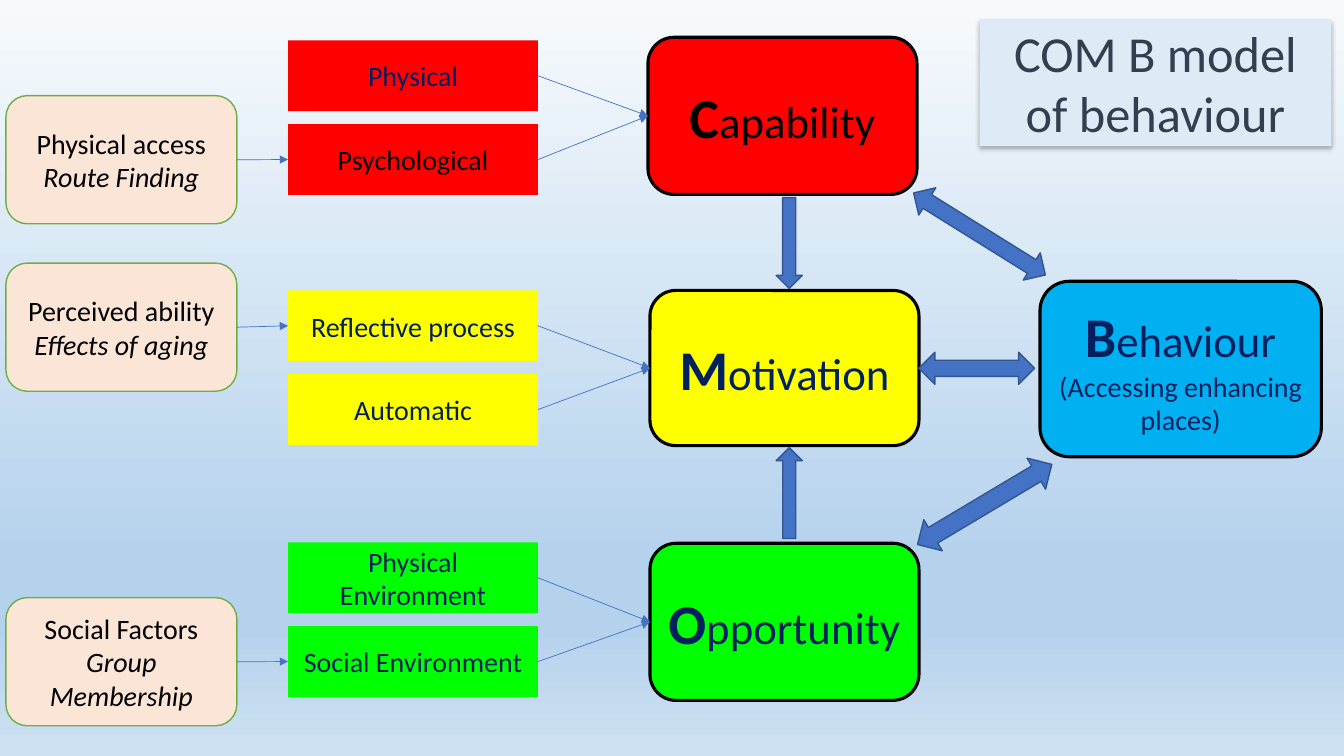
from dataclasses import dataclass

from lxml import etree
from pptx import Presentation
from pptx.dml.color import RGBColor
from pptx.enum.shapes import MSO_CONNECTOR, MSO_SHAPE
from pptx.enum.text import MSO_ANCHOR, MSO_AUTO_SIZE, PP_ALIGN
from pptx.oxml.ns import qn
from pptx.util import Cm, Pt

RECT = MSO_SHAPE.RECTANGLE
ROUND = MSO_SHAPE.ROUNDED_RECTANGLE
DOWN = MSO_SHAPE.DOWN_ARROW
BOTH = MSO_SHAPE.UP_DOWN_ARROW
LINE = MSO_CONNECTOR.STRAIGHT
MIDDLE = MSO_ANCHOR.MIDDLE
CENTER = PP_ALIGN.CENTER
NO_FIT = MSO_AUTO_SIZE.NONE
LEFT, RIGHT = 1, 3


@dataclass(frozen=True)
class Theme:
    font: str = "Calibri"
    black: str = "000000"
    navy: str = "002060"
    slate: str = "333F50"
    red: str = "FF0000"
    yellow: str = "FFFF00"
    green: str = "00FF00"
    cyan: str = "00B0F0"
    blue: str = "4472C4"
    edge: str = "325491"
    peach: str = "FBE5D6"
    leaf: str = "70AD47"
    pale: str = "DEEBF7"
    sky: tuple = ((0, "F7FAFD"), (74, "B5D2EC"), (83, "B5D2EC"), (100, "CEE1F2"))
    title: int = 36
    letter: int = 40
    word: int = 32
    body: int = 20


THEME = Theme()

# stage, box left, top, height, fill, ink, first part top, parts with ink
STAGES = (
    ("Capability", 16.33, 0.94, 3.96, THEME.red, THEME.black, 1.02,
     (("Physical", THEME.navy), ("Psychological", THEME.black))),
    ("Motivation", 16.38, 7.32, 3.91, THEME.yellow, THEME.navy, 7.32,
     (("Reflective process", THEME.navy), ("Automatic", THEME.navy))),
    ("Opportunity", 16.38, 13.69, 3.96, THEME.green, THEME.navy, 13.67,
     (("Physical Environment", THEME.navy), ("Social Environment", THEME.navy))),
)
PART_STEP = 2.11

# topic, example, top, part it leads to
FACTORS = (
    ("Physical access", "Route Finding", 2.41, "Psychological"),
    ("Perceived ability", "Effects of aging", 6.63, "Reflective process"),
    ("Social Factors", "Group Membership", 15.06, "Social Environment"),
)

# kind, left, top, width, height, turn
ARROWS = (
    (DOWN, 19.56, 4.98, 0.66, 2.29, 0),
    (DOWN, 19.56, 11.28, 0.66, 2.29, 180),
    (BOTH, 24.28, 3.94, 0.81, 3.91, 301.9),
    (BOTH, 24.36, 10.74, 0.91, 3.94, 239.2),
    (BOTH, 24.21, 7.82, 0.81, 2.92, 270),
)


def paint(fill, color):
    fill.solid()
    fill.fore_color.rgb = RGBColor.from_string(color)


def add_box(slide, kind, place, color, line=None, width=1):
    shape = slide.shapes.add_shape(kind, *map(Cm, place))
    shape.shadow.inherit = False
    paint(shape.fill, color)
    if line:
        paint(shape.line.fill, line)
        shape.line.width = Pt(width)
    else:
        shape.line.fill.background()
    return shape


def write(shape, lines):
    """Fill a shape with lines of (text, size, color, bold, italic) runs."""
    frame = shape.text_frame
    frame.word_wrap = True
    frame.vertical_anchor = MIDDLE
    for i, runs in enumerate(lines):
        para = frame.add_paragraph() if i else frame.paragraphs[0]
        para.alignment = CENTER
        for text, size, color, bold, italic in runs:
            run = para.add_run()
            run.text = text
            run.font.name = THEME.font
            run.font.size = Pt(size)
            run.font.bold = bold
            run.font.italic = italic
            run.font.color.rgb = RGBColor.from_string(color)


def initial(word, ink):
    """Runs for a word with a large bold first letter."""
    return ((word[0], THEME.letter, ink, True, False),
            (word[1:], THEME.word, ink, False, False))


def plain(text, ink, italic=False):
    return ((text, THEME.body, ink, False, italic),)


def link(slide, start, end):
    line = slide.shapes.add_connector(LINE, 0, 0, 0, 0)
    line.begin_connect(start, RIGHT)
    line.end_connect(end, LEFT)
    paint(line.line.fill, THEME.blue)
    line.line.width = Pt(0.5)
    props = line.element.spPr
    etree.SubElement(props.find(qn("a:ln")), qn("a:tailEnd"), type="triangle")
    etree.SubElement(props, qn("a:effectLst"))


def add_sky(slide):
    fill = slide.background.fill
    fill.gradient()
    fill.gradient_angle = 270
    stops = slide.element.find(".//" + qn("a:gsLst"))
    for stop in list(stops):
        stops.remove(stop)
    for share, color in THEME.sky:
        stop = etree.SubElement(stops, qn("a:gs"), pos=str(share * 1000))
        etree.SubElement(stop, qn("a:srgbClr"), val=color)


def add_title(slide, text):
    """Turn the title placeholder into a rounded card with a soft shadow."""
    title = slide.shapes.title
    title.left, title.top, title.width, title.height = map(
        Cm, (24.69, 0.48, 8.86, 3.2))
    props = title.element.spPr
    shape = etree.SubElement(props, qn("a:prstGeom"), prst="roundRect")
    etree.SubElement(shape, qn("a:avLst"))
    paint(title.fill, THEME.pale)
    effects = etree.SubElement(props, qn("a:effectLst"))
    shadow = etree.SubElement(
        effects, qn("a:outerShdw"), blurRad=str(Pt(3.5)), dist=str(Pt(2.2)),
        dir="5400000", algn="t", rotWithShape="0")
    shade = etree.SubElement(shadow, qn("a:srgbClr"), val=THEME.black)
    etree.SubElement(shade, qn("a:alpha"), val="32000")
    title.text_frame.auto_size = NO_FIT
    write(title, [((text, THEME.title, THEME.slate, False, False),)])


def add_stages(slide):
    """Draw the stages with their parts and return the parts by name."""
    parts = {}
    for name, left, top, height, color, ink, first, names in STAGES:
        stage = add_box(slide, ROUND, (left, top, 6.78, height), color,
                        THEME.black, 2.25)
        write(stage, [initial(name, ink)])
        for i, (label, tint) in enumerate(names):
            place = (7.26, first + i * PART_STEP, 6.3, 1.78)
            part = parts[label] = add_box(slide, RECT, place, color)
            write(part, [plain(label, tint)])
            link(slide, part, stage)
    return parts


def add_factors(slide, parts):
    for topic, example, top, target in FACTORS:
        factor = add_box(slide, ROUND, (0.15, top, 5.82, 3.23), THEME.peach,
                         THEME.leaf)
        write(factor, [plain(topic, THEME.black),
                       plain(example, THEME.black, True)])
        link(slide, factor, parts[target])


def add_result(slide):
    result = add_box(slide, ROUND, (26.21, 7.09, 7.09, 4.42), THEME.cyan,
                     THEME.black, 2.25)
    write(result, [initial("Behaviour", THEME.navy),
                   plain("(Accessing enhancing places)", THEME.navy)])


def main():
    deck = Presentation()
    deck.slide_width, deck.slide_height = Cm(33.87), Cm(19.05)
    slide = deck.slides.add_slide(deck.slide_layouts.get_by_name("Title Only"))
    add_sky(slide)
    add_title(slide, "COM B model of behaviour")
    parts = add_stages(slide)
    add_result(slide)
    for kind, *place, turn in ARROWS:
        add_box(slide, kind, place, THEME.blue, THEME.edge).rotation = turn
    add_factors(slide, parts)
    deck.save("out.pptx")


if __name__ == "__main__":
    main()
